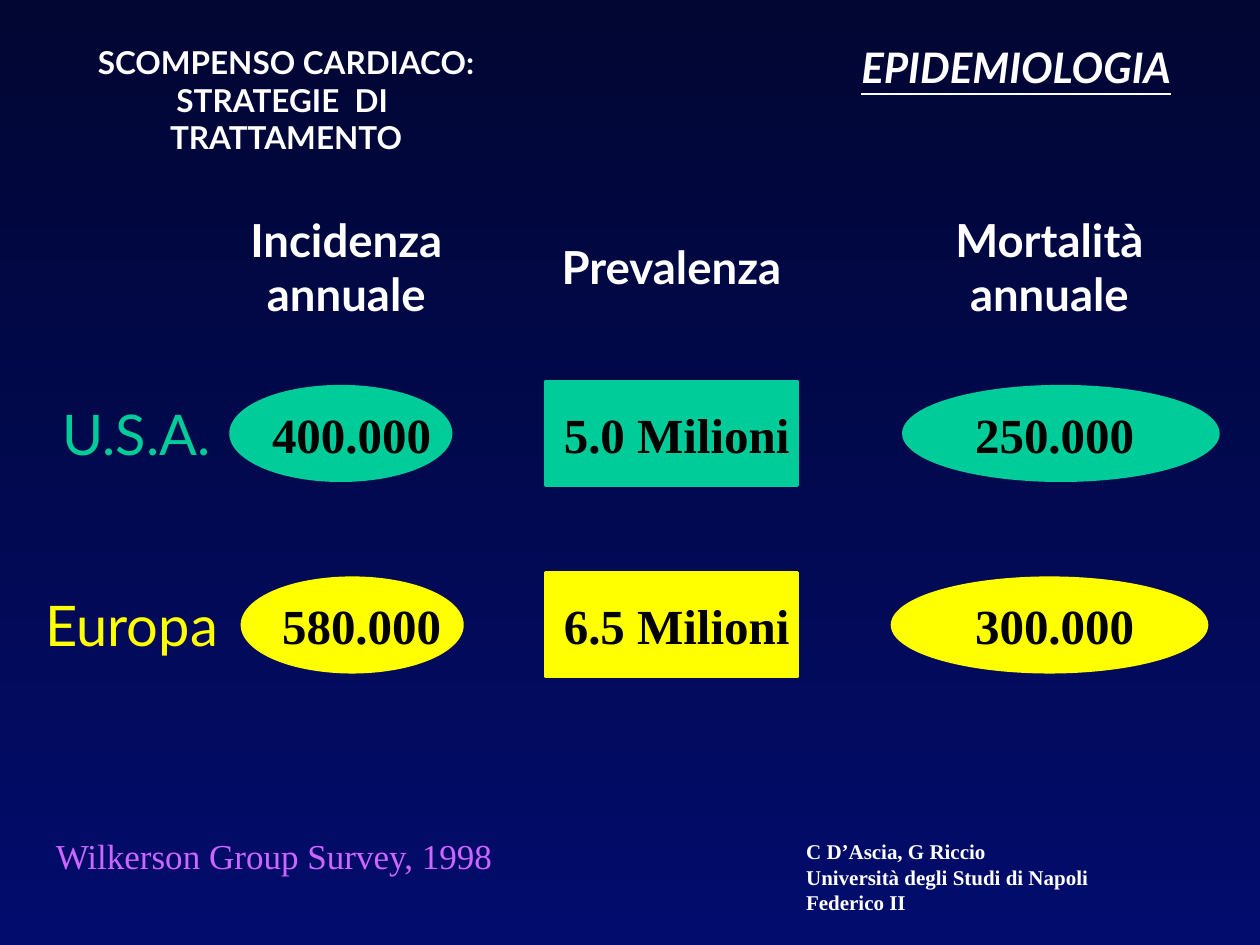
import pptx
import pptx.util
import pptx.dml.color
import pptx.enum.shapes
import pptx.enum.text

Inches = pptx.util.Inches
RGB = pptx.dml.color.RGBColor
SHAPE = pptx.enum.shapes.MSO_SHAPE
ALIGN = pptx.enum.text.PP_ALIGN

NAVY = RGB(0x01, 0x06, 0x32)
BLUE = RGB(0x02, 0x0C, 0x6C)
GREEN = RGB(0x00, 0xCC, 0x99)
YELLOW = RGB(0xFF, 0xFF, 0x00)
VIOLET = RGB(0xCC, 0x66, 0xFF)
WHITE = RGB(0xFF, 0xFF, 0xFF)
BLACK = RGB(0x00, 0x00, 0x00)

TITLE = {"name": "Lato", "size": pptx.util.Pt(18), "bold": True}
TOPIC = {"name": "Lato", "size": pptx.util.Pt(24), "bold": True, "italic": True, "underline": True}
HEADING = {"name": "Lato", "size": pptx.util.Pt(26), "bold": True}
REGION = {"name": "Lato", "size": pptx.util.Pt(32)}
FIGURE = {"name": "Times New Roman", "size": pptx.util.Pt(28), "bold": True}
SOURCE = {"name": "Times New Roman", "size": pptx.util.Pt(20)}
AUTHORS = {"name": "Times New Roman", "size": pptx.util.Pt(12), "bold": True}


def write(sp, lines, fmt, color, align=ALIGN.CENTER, wrap=True):
    tf = sp.text_frame
    tf.word_wrap = wrap
    tf.auto_size = pptx.enum.text.MSO_AUTO_SIZE.NONE
    tf.vertical_anchor = pptx.enum.text.MSO_ANCHOR.TOP
    for i, line in enumerate(lines):
        p = tf.paragraphs[0] if i == 0 else tf.add_paragraph()
        p.alignment = align
        r = p.add_run()
        r.text = line
        for key, value in fmt.items():
            setattr(r.font, key, value)
        r.font.color.rgb = color


def add_text(box, lines, fmt, color, **options):
    sp = s.shapes.add_textbox(*map(Inches, box))
    write(sp, lines, fmt, color, **options)


prs = pptx.Presentation()
prs.slide_width, prs.slide_height = Inches(10), Inches(7.5)
s = prs.slides.add_slide(prs.slide_layouts[5])

bg = s.background.fill
bg.gradient()
bg.gradient_angle = 270
for stop, position, color in zip(bg.gradient_stops, (0, 1), (NAVY, BLUE)):
    stop.position = position
    stop.color.rgb = color

title = s.shapes.title
title.left, title.top, title.width, title.height = map(Inches, (0.57, 0.29, 3.4, 1))
write(title, ["SCOMPENSO CARDIACO:", "STRATEGIE  DI  TRATTAMENTO"], TITLE, WHITE)
add_text((6.7, 0.28, 2.73, 0.5), ["EPIDEMIOLOGIA"], TOPIC, WHITE, wrap=False)

headings = [
    (1.75, 1.63, 0.97, "Incidenza annuale"),
    (4.33, 1.85, 0.53, "Prevalenza"),
    (7.33, 1.63, 0.97, "Mortalità annuale"),
]
for left, top, height, heading in headings:
    add_text((left, top, 2, height), [heading], HEADING, WHITE)

kinds = [(SHAPE.OVAL, 1.75, 0.75), (SHAPE.RECTANGLE, 2, 0.83), (SHAPE.OVAL, 2.5, 0.75)]
regions = [
    ("U.S.A.", GREEN, 3.44, 0.25, 1.67,
     [(1.83, 1.75, "400.000"), (4.33, 4.33, "5.0 Milioni"), (7.17, 7.33, "250.000")]),
    ("Europa", YELLOW, 4.96, 0.17, 1.75,
     [(1.92, 1.83, "580.000"), (4.33, 4.33, "6.5 Milioni"), (7.08, 7.33, "300.000")]),
]
for region, color, middle, label_left, label_width, figures in regions:
    add_text((label_left, middle - 0.32, label_width, 0.63), [region], REGION, color)
    for (kind, width, height), (left, text_left, figure) in zip(kinds, figures):
        box = (left, middle - height / 2, width, height)
        sp = s.shapes.add_shape(kind, *map(Inches, box))
        sp.shadow.inherit = False
        sp.fill.solid()
        sp.fill.fore_color.rgb = color
        sp.line.color.rgb = color
        sp.line.width = pptx.util.Pt(1.5)
        add_text((text_left, middle - 0.28, 2.08, 0.57), [figure], FIGURE, BLACK)

add_text((0.33, 6.57, 3.69, 0.43), ["Wilkerson Group Survey, 1998"], SOURCE, VIOLET, wrap=False)
add_text(
    (6.3, 6.61, 3.5, 0.7),
    ["C D’Ascia, G Riccio", "Università degli Studi di Napoli", "Federico II"],
    AUTHORS, WHITE, align=ALIGN.LEFT,
)

prs.save("out.pptx")
